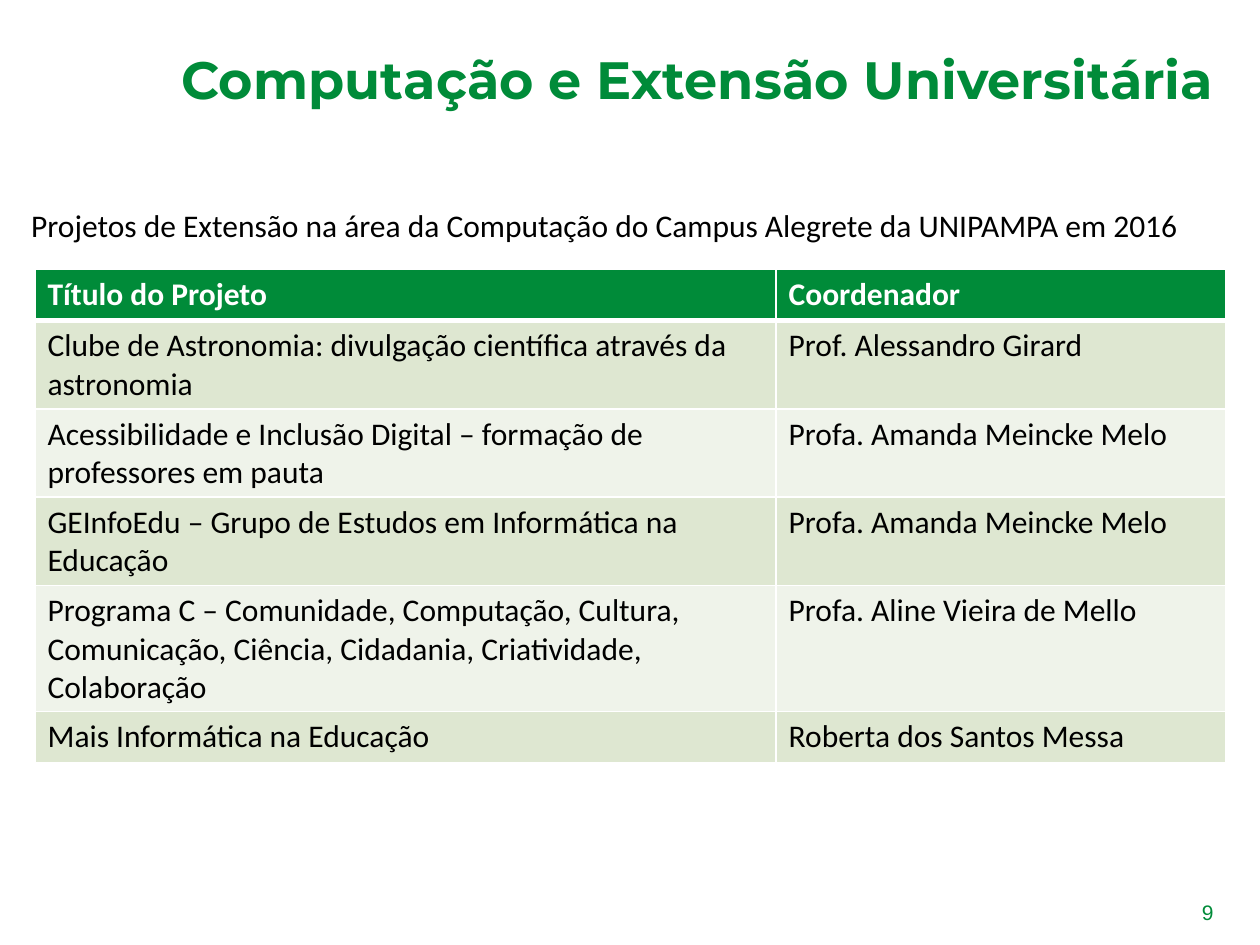
import pptx
import pptx.util
import pptx.dml.color
import pptx.enum.text
import pptx.oxml
import pptx.oxml.ns
import lxml.etree

Pt = pptx.util.Pt
RGBColor = pptx.dml.color.RGBColor
ALIGN = pptx.enum.text.PP_ALIGN
ANCHOR = pptx.enum.text.MSO_ANCHOR

THEME = {
    "green": RGBColor.from_string("008B39"),
    "white": RGBColor.from_string("FFFFFF"),
    "black": RGBColor.from_string("000000"),
    "bands": [RGBColor.from_string("DEE7D1"), RGBColor.from_string("EFF3EA")],
}
TITLE = {"name": "Montserrat", "size": Pt(30), "bold": True, "color": THEME["green"]}
BODY = {"name": "Calibri", "size": Pt(18), "bold": False, "color": THEME["black"]}
HEADER = {**BODY, "bold": True, "color": THEME["white"]}
NUMBER = {"name": "Arial", "size": Pt(12), "bold": False, "color": THEME["green"]}

# text, (left, top, width, height), font, alignment, anchor, wrap
TEXTS = [
    ("9", (649.5, 509.75, 51, 22.5), NUMBER, ALIGN.RIGHT, ANCHOR.MIDDLE, True),
    ("Computação e Extensão Universitária", (20, 16.5, 680.5, 57),
     TITLE, ALIGN.RIGHT, ANCHOR.MIDDLE, True),
    ("Projetos de Extensão na área da Computação do Campus Alegrete da UNIPAMPA em 2016",
     (10.75, 114, 677.5, 29), BODY, ALIGN.LEFT, ANCHOR.TOP, False),
]
PROJECTS = [
    ("Título do Projeto", "Coordenador"),
    ("Clube de Astronomia: divulgação científica através da astronomia",
     "Prof. Alessandro Girard"),
    ("Acessibilidade e Inclusão Digital – formação de professores em pauta",
     "Profa. Amanda Meincke Melo"),
    ("GEInfoEdu – Grupo de Estudos em Informática na Educação",
     "Profa. Amanda Meincke Melo"),
    ("Programa C – Comunidade, Computação, Cultura, Comunicação, Ciência, "
     "Cidadania, Criatividade, Colaboração", "Profa. Aline Vieira de Mello"),
    ("Mais Informática na Educação", "Roberta dos Santos Messa"),
]
TABLE_BOX = (20, 154, 680.5, 281.5)
COLUMN_WIDTHS = (423.5, 257)
ROW_HEIGHT = 29.2


def write(text_frame, text, style, alignment=ALIGN.LEFT):
    paragraph = text_frame.paragraphs[0]
    paragraph.alignment = alignment
    run = paragraph.add_run()
    run.text = text
    for attribute, value in style.items():
        if attribute == "color":
            run.font.color.rgb = value
        else:
            setattr(run.font, attribute, value)


def add_text(slide, text, box, style, alignment, anchor, wrap):
    text_frame = slide.shapes.add_textbox(*map(Pt, box)).text_frame
    text_frame.word_wrap = wrap
    text_frame.vertical_anchor = anchor
    write(text_frame, text, style, alignment)


def set_borders(cell, widths):
    """Draw white borders; the lines must come before the fill in the cell's XML."""
    properties = cell._tc.get_or_add_tcPr()
    for position, (side, width) in enumerate(widths.items()):
        line = lxml.etree.Element(pptx.oxml.ns.qn(f"a:ln{side}"), w=str(Pt(width)))
        fill = lxml.etree.SubElement(line, pptx.oxml.ns.qn("a:solidFill"))
        lxml.etree.SubElement(fill, pptx.oxml.ns.qn("a:srgbClr"), val=str(THEME["white"]))
        properties.insert(position, line)


def add_projects(slide):
    frame = slide.shapes.add_table(len(PROJECTS), len(COLUMN_WIDTHS), *map(Pt, TABLE_BOX))
    table = frame.table
    for column, width in zip(table.columns, COLUMN_WIDTHS):
        column.width = Pt(width)
    for row_index, values in enumerate(PROJECTS):
        # Rows grow from this minimum to fit their text.
        table.rows[row_index].height = Pt(ROW_HEIGHT)
        is_header = row_index == 0
        for column_index, text in enumerate(values):
            cell = table.cell(row_index, column_index)
            cell.fill.solid()
            cell.fill.fore_color.rgb = (
                THEME["green"] if is_header else THEME["bands"][(row_index - 1) % 2])
            set_borders(cell, {"L": 1, "R": 1, "T": 3 if row_index == 1 else 1,
                               "B": 3 if is_header else 1})
            write(cell.text_frame, text, HEADER if is_header else BODY)
    frame.height = Pt(TABLE_BOX[3])


def main():
    presentation = pptx.Presentation()
    presentation.slide_width, presentation.slide_height = Pt(720), Pt(540)
    slide = presentation.slides.add_slide(presentation.slide_layouts[6])
    for item in TEXTS:
        add_text(slide, *item)
    add_projects(slide)
    presentation.save("out.pptx")


if __name__ == "__main__":
    main()
